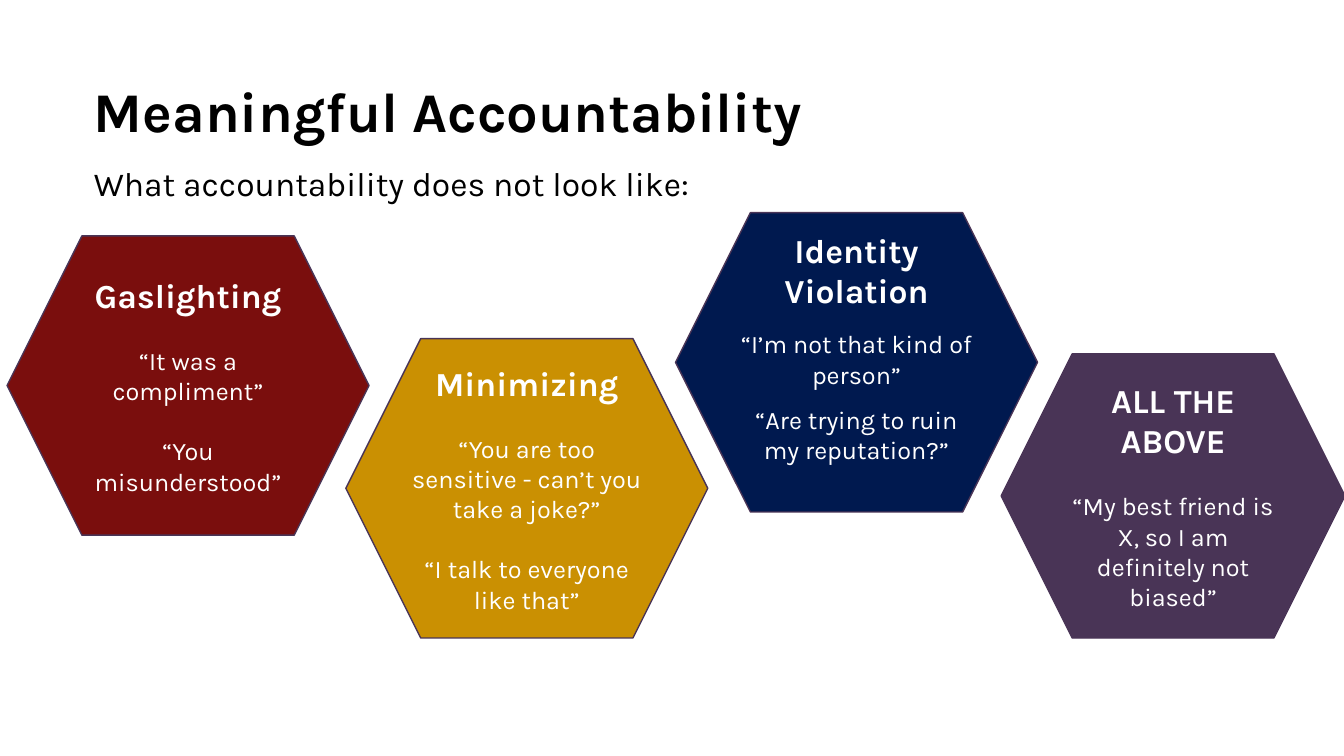
from dataclasses import dataclass

from lxml import etree
from pptx import Presentation
from pptx.dml.color import RGBColor
from pptx.enum import shapes, text
from pptx.oxml import ns
from pptx.util import Inches, Pt


@dataclass(frozen=True)
class Theme:
    font: str = "Karla"
    ink: str = "000000"
    light: str = "FFFFFF"
    red: str = "7A0E0D"
    gold: str = "CA9002"
    navy: str = "00194F"
    plum: str = "493456"
    title: int = 40
    heading: int = 24
    quote: int = 18


THEME = Theme()
LARGE = (3.59, 2.97)
SMALL = (3.41, 2.82)
FULL_GAP = 21.5

# heading, colour, (left, top), (width, height), quotes with space before, bottom inset
EXCUSES = [
    ("Gaslighting", THEME.red, (0.07, 2.34), LARGE,
     [("“It was a compliment”", FULL_GAP), ("“You misunderstood”", FULL_GAP)], 0.05),
    ("Minimizing", THEME.gold, (3.43, 3.36), LARGE,
     [("“You are too sensitive - can’t you take a joke?”", FULL_GAP),
      ("“I talk to everyone like that”", FULL_GAP)], 0.05),
    ("Identity Violation", THEME.navy, (6.7, 2.11), LARGE,
     [("“I’m not that kind of person”", 13), ("“Are trying to ruin my reputation?”", 10.7)], 0.35),
    ("ALL THE ABOVE", THEME.plum, (9.93, 3.51), SMALL,
     [("“My best friend is X, so I am definitely not biased”", FULL_GAP)], 0.05),
]


def write(paragraph, words, size, color=THEME.ink, bold=False,
          align=text.PP_ALIGN.LEFT, before=0, spacing=1.0):
    paragraph.text = words
    paragraph.alignment = align
    paragraph.space_before = Pt(before)
    paragraph.space_after = Pt(0)
    paragraph.line_spacing = spacing
    font = paragraph.font
    font.name, font.size, font.bold = THEME.font, Pt(size), bold
    font.color.rgb = RGBColor.from_string(color)


def place(placeholder, left, top, width, height):
    """Move a placeholder and return its first paragraph."""
    placeholder.left, placeholder.top = Inches(left), Inches(top)
    placeholder.width, placeholder.height = Inches(width), Inches(height)
    frame = placeholder.text_frame
    frame.word_wrap = True
    frame.auto_size = text.MSO_AUTO_SIZE.NONE
    frame.vertical_anchor = text.MSO_ANCHOR.TOP
    return frame.paragraphs[0]


def add_header(slide, left, top):
    title = place(slide.shapes.title, left, top, 11.58, 0.71)
    write(title, "Meaningful Accountability", THEME.title, bold=True, spacing=0.9)

    subtitle = place(slide.placeholders[1], left, top + 0.79, 11.67, 1.01)
    properties = subtitle._p.get_or_add_pPr()
    properties.set("marL", "0")
    properties.set("indent", "0")
    etree.SubElement(properties, ns.qn("a:buNone"))
    write(subtitle, "What accountability does not look like:", THEME.heading)


def add_excuse(slide, heading, color, position, size, quotes, bottom_inset):
    hexagon = slide.shapes.add_shape(
        shapes.MSO_SHAPE.HEXAGON, *(Inches(length) for length in position + size))
    hexagon.shadow.inherit = False
    hexagon.fill.solid()
    hexagon.fill.fore_color.rgb = RGBColor.from_string(color)
    hexagon.line.color.rgb = RGBColor.from_string(THEME.plum)
    hexagon.line.width = Pt(1)

    frame = hexagon.text_frame
    frame.word_wrap = True
    frame.vertical_anchor = text.MSO_ANCHOR.MIDDLE
    frame.margin_bottom = Inches(bottom_inset)
    centred = {"color": THEME.light, "align": text.PP_ALIGN.CENTER}
    write(frame.paragraphs[0], heading, THEME.heading, bold=True, **centred)
    for quote, gap in quotes:
        write(frame.add_paragraph(), quote, THEME.quote, before=gap, **centred)


def main():
    deck = Presentation()
    deck.slide_width, deck.slide_height = Inches(13.33), Inches(7.5)
    slide = deck.slides.add_slide(deck.slide_layouts[1])
    add_header(slide, 0.83, 0.78)
    for excuse in EXCUSES:
        add_excuse(slide, *excuse)
    deck.save("out.pptx")


if __name__ == "__main__":
    main()
